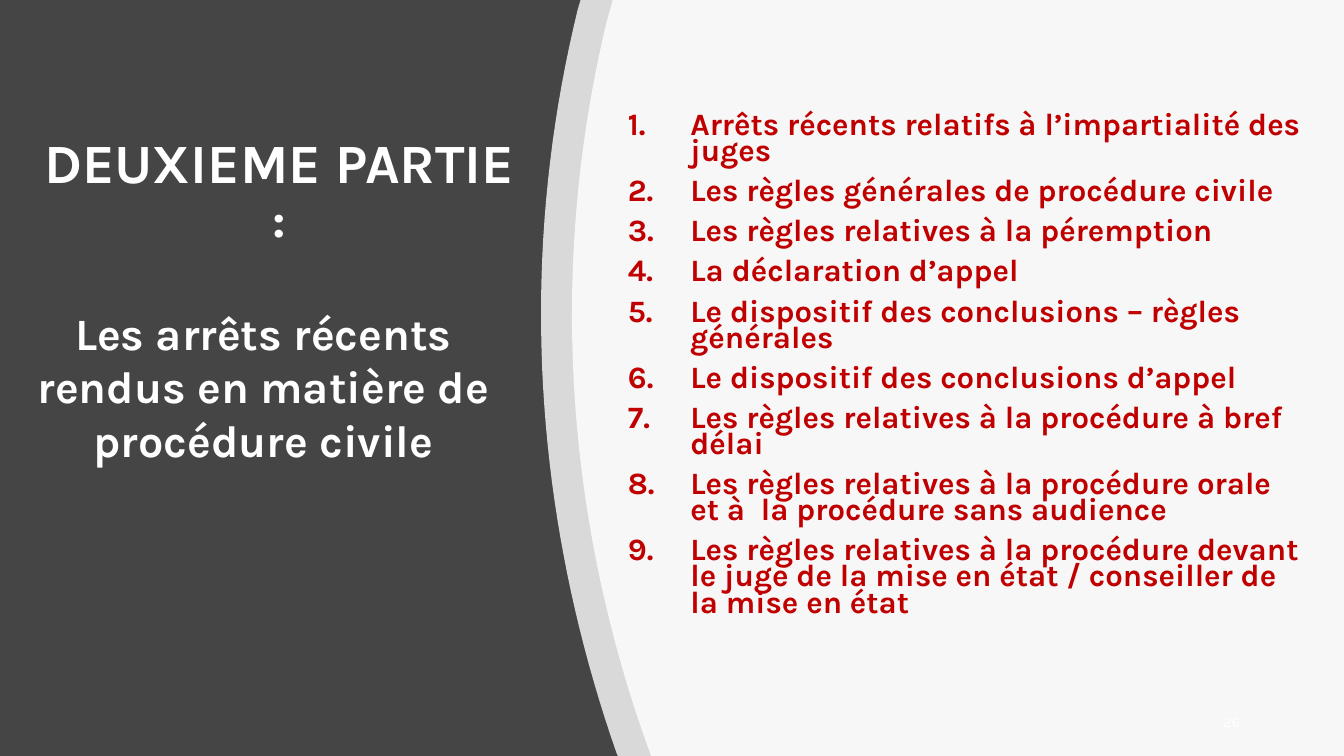
from lxml.etree import SubElement
from pptx import Presentation
from pptx.dml.color import RGBColor
from pptx.enum.text import MSO_ANCHOR, MSO_AUTO_SIZE, PP_ALIGN
from pptx.oxml.ns import qn
from pptx.util import Inches, Pt

WIDTH, HEIGHT = Inches(13.333), Inches(7.5)
FONT, DARK, WHITE, RED = "Karla", "454545", "FFFFFF", "C00000"
TOPICS = [
    "Arrêts récents relatifs à l’impartialité des juges",
    "Les règles générales de procédure civile",
    "Les règles relatives à la péremption",
    "La déclaration d’appel",
    "Le dispositif des conclusions – règles générales",
    "Le dispositif des conclusions d’appel",
    "Les règles relatives à la procédure à bref délai",
    "Les règles relatives à la procédure orale et à  la procédure sans audience",
    "Les règles relatives à la procédure devant le juge de la mise en état / conseiller de la mise en état",
]


def rgb(value):
    """Return the colour for a hex string."""
    return RGBColor.from_string(value)


def across(percent):
    """Convert a percentage of the slide width to a length."""
    return round(WIDTH * percent / 100)


def down(percent):
    """Convert a percentage of the slide height to a length."""
    return round(HEIGHT * percent / 100)


def place(left, top, width, height):
    """Convert a box given in percentages to lengths."""
    return across(left), down(top), across(width), down(height)


def format_font(font, size, color, bold=True):
    """Apply the typeface, size, weight and colour."""
    font.name, font.size, font.bold = FONT, Pt(size), bold
    font.color.rgb = rgb(color)


def add_text(s, box, lines, size, color, align=PP_ALIGN.LEFT, anchor=MSO_ANCHOR.TOP, bold=True):
    """Add a wrapping text box with one paragraph per line."""
    tf = s.shapes.add_textbox(*place(*box)).text_frame
    tf.word_wrap, tf.vertical_anchor = True, anchor
    tf.text = "\n".join(lines)
    for p in tf.paragraphs:
        p.alignment = align
        for r in p.runs:
            format_font(r.font, size, color, bold)
    return tf


def number_paragraphs(tf):
    """Turn the paragraphs into a tight numbered list."""
    for i, p in enumerate(tf.paragraphs):
        p.line_spacing = 0.7
        p.space_before = Pt(10 if i else 0)
        pPr = p._p.get_or_add_pPr()
        pPr.set("marL", str(Inches(0.62)))
        pPr.set("indent", str(Inches(-0.62)))
        SubElement(pPr, qn("a:buFont"), typeface="+mj-lt")
        SubElement(pPr, qn("a:buAutoNum"), type="arabicPeriod")


def bezier(points, steps=40):
    """Sample a cubic curve through its four control points."""
    for i in range(steps + 1):
        t = i / steps
        weights = (1 - t) ** 3, 3 * t * (1 - t) ** 2, 3 * t**2 * (1 - t), t**3
        yield tuple(sum(w * p[axis] for w, p in zip(weights, points)) for axis in (0, 1))


def add_curved_panel(s, bottom, curve, top):
    """Add a translucent white panel with a curved left edge."""
    outline = [(100, 0), (100, 100), (bottom, 100), *bezier(curve)]
    builder = s.shapes.build_freeform(across(top), 0)
    builder.add_line_segments([(across(x), down(y)) for x, y in outline], close=True)
    sp = builder.convert_to_shape()
    sp.shadow.inherit = False
    sp.fill.solid()
    sp.fill.fore_color.rgb = rgb(WHITE)
    SubElement(sp.fill._xPr.find(".//" + qn("a:srgbClr")), qn("a:alpha"), val="80000")
    sp.line.fill.background()


def format_title(s):
    """Place and fill the title placeholder."""
    title = s.shapes.title
    title.left, title.top, title.width, title.height = place(2.48, 17.6, 36.6, 15.73)
    tf = title.text_frame
    tf.word_wrap, tf.vertical_anchor = True, MSO_ANCHOR.MIDDLE
    p = tf.paragraphs[0]
    p.alignment, p.line_spacing = PP_ALIGN.CENTER, 0.9
    for text, size in (("DEUXIEME PARTIE ", 39.6), (":", 36)):
        r = p.add_run()
        r.text = text
        format_font(r.font, size, WHITE)


def main():
    """Build the slide and save it."""
    prs = Presentation()
    prs.slide_width, prs.slide_height = WIDTH, HEIGHT
    s = prs.slides.add_slide(prs.slide_layouts[5])
    s.background.fill.solid()
    s.background.fill.fore_color.rgb = rgb(DARK)
    format_title(s)
    add_curved_panel(s, 45.98, [(45.9, 99.73), (39.75, 68.53), (38.4, 34.67), (42.98, 1.33)], 43.2)
    add_curved_panel(s, 48.45, [(47.7, 96.27), (42, 66.53), (40.88, 34.4), (45.15, 2.8)], 45.6)
    topics = add_text(s, (45.98, 15.87, 51.53, 65.2), TOPICS, 22.2, RED, anchor=MSO_ANCHOR.MIDDLE)
    number_paragraphs(topics)
    subtitle = add_text(s, (0.15, 39.73, 38.93, 22.93),
                        ["Les arrêts récents rendus en matière de procédure civile"],
                        32, WHITE, PP_ALIGN.CENTER)
    subtitle.auto_size = MSO_AUTO_SIZE.SHAPE_TO_FIT_TEXT
    add_text(s, (84, 93.4, 9, 4), ["26"], 10.5, WHITE, PP_ALIGN.RIGHT, MSO_ANCHOR.MIDDLE, False)
    prs.save("out.pptx")


if __name__ == "__main__":
    main()
